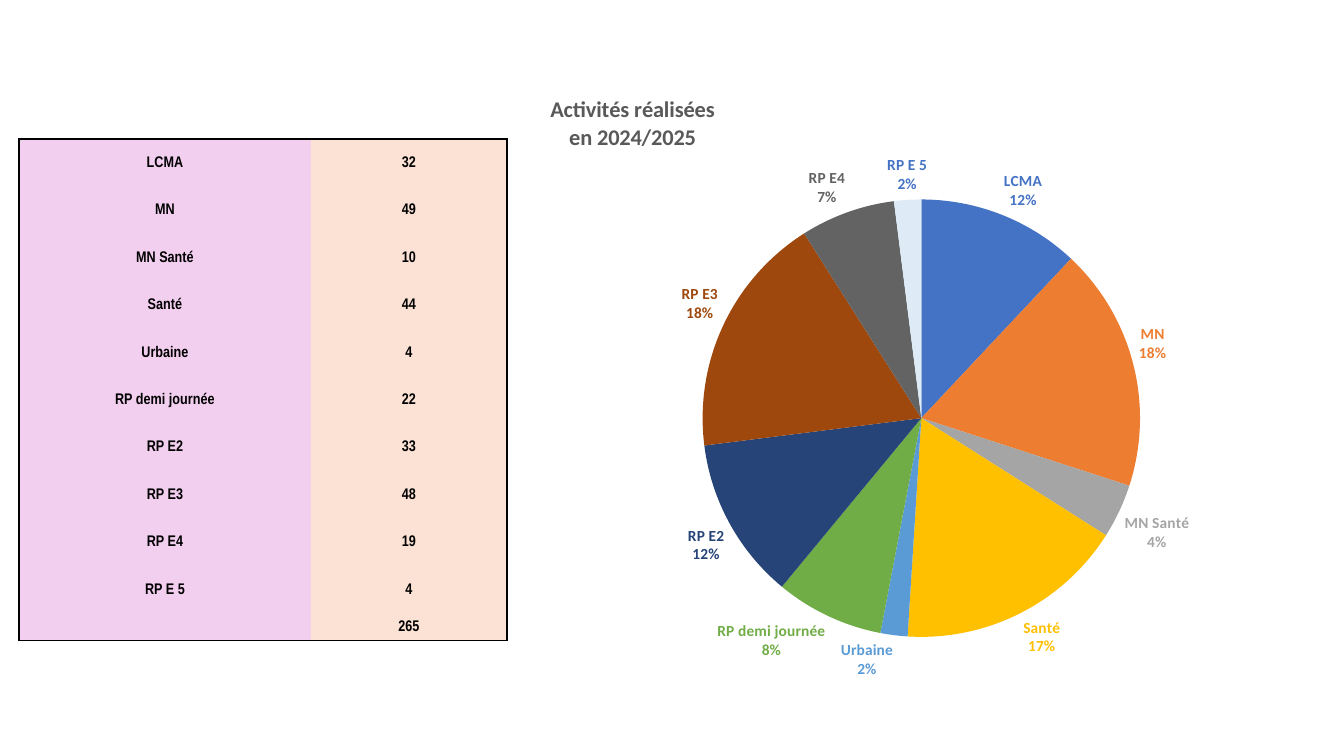
"""Build the slide of activities carried out in 2024/2025."""
from lxml.etree import SubElement as Sub
from pptx import Presentation
from pptx.chart.data import CategoryChartData as Data
from pptx.dml.color import RGBColor as Rgb
from pptx.enum.chart import XL_CHART_TYPE as Kind, XL_LABEL_POSITION as Spot
from pptx.enum.text import MSO_ANCHOR as Anchor, PP_ALIGN as Align
from pptx.oxml import parse_xml
from pptx.oxml.ns import nsdecls, qn
from pptx.util import Pt

SCALE = 12192000 / 1344
INK = {"text": "000000", "title": "595959", "name": "F2CEEF", "count": "FBE2D5"}
NO_STYLE = "{2D5ABB26-0587-4C30-8999-92F81FD0307C}"
ROWS = [
    ("LCMA", 32, 12, "4472C4"),
    ("MN", 49, 18, "ED7D31"),
    ("MN Santé", 10, 4, "A5A5A5"),
    ("Santé", 44, 17, "FFC000"),
    ("Urbaine", 4, 2, "5B9BD5"),
    ("RP demi journée", 22, 8, "70AD47"),
    ("RP E2", 33, 12, "264478"),
    ("RP E3", 48, 18, "9E480E"),
    ("RP E4", 19, 7, "636363"),
    ("RP E 5", 4, 2, "DEEBF7"),
]


def px(num):
    return round(num * SCALE)


class Deck:
    def __init__(self, wide, high):
        self.show = Presentation()
        self.show.slide_width, self.show.slide_height = px(wide), px(high)
        self.slide = self.show.slides.add_slide(self.show.slide_layouts[6])

    def style(self, font, face, size, tint):
        font.name, font.size, font.bold = face, Pt(size), True
        font.color.rgb = Rgb.from_string(tint)

    def edge(self, cell, sides):
        props = cell._tc.get_or_add_tcPr()
        for spot, side in enumerate(sides):
            props.insert(spot, parse_xml(
                f'<a:ln{side} {nsdecls("a")} w="12700"><a:solidFill>'
                f'<a:srgbClr val="{INK["text"]}"/></a:solidFill></a:ln{side}>'))

    def cell(self, cell, text, tint):
        cell.fill.solid()
        cell.fill.fore_color.rgb = Rgb.from_string(tint)
        cell.vertical_anchor = Anchor.MIDDLE
        cell.margin_left = cell.margin_right = cell.margin_top = px(1)
        cell.margin_bottom = 0
        cell.text_frame.text = text
        par = cell.text_frame.paragraphs[0]
        par.alignment = Align.CENTER
        for run in par.runs:
            self.style(run.font, "Arial Narrow", 11, INK["text"])
        if not text:
            Sub(par._p, qn("a:endParaRPr"), sz="1100")

    def table(self, left, top, cols, highs, rows):
        last = len(rows) - 1
        table = self.slide.shapes.add_table(
            len(rows), len(cols), px(left), px(top), px(sum(cols)), px(sum(highs))).table
        table.first_row = table.horz_banding = False
        table._tbl.tblPr.find(qn("a:tableStyleId")).text = NO_STYLE
        for col, wide in zip(table.columns, cols):
            col.width = px(wide)
        for row, high in zip(table.rows, highs):
            row.height = px(high)
        for i, texts in enumerate(rows):
            for j, (text, tint) in enumerate(zip(texts, (INK["name"], INK["count"]))):
                cell = table.cell(i, j)
                self.cell(cell, text, tint)
                self.edge(cell, ["LR"[j]] + ["T"] * (i == 0) + ["B"] * (i == last))

    def place(self, node, spot, **parts):
        for old in node.findall(qn("c:layout")):
            node.remove(old)
        layout = parse_xml(f'<c:layout {nsdecls("c")}><c:manualLayout/></c:layout>')
        for tag, val in parts.items():
            Sub(layout[0], qn(f"c:{tag}"), val=str(val))
        node.insert(spot, layout)

    def title(self, chart, text):
        frame = chart.chart_title.text_frame
        frame.text = text
        for par in frame.paragraphs:
            par.alignment = Align.CENTER
            for run in par.runs:
                self.style(run.font, "Calibri", 16, INK["title"])
        self.place(chart.chart_title.element, 1, xMode="edge", yMode="edge", x=0.03, y=0.05)

    def label(self, point, tint):
        label = point.data_label
        self.style(label.font, "Calibri", 11, tint)
        label.position = Spot.OUTSIDE_END
        node = label._dLbl
        for tag, val in (("showVal", "0"), ("showCatName", "1"), ("showPercent", "1")):
            node.find(qn(f"c:{tag}")).set("val", val)
        Sub(node, qn("c:separator")).text = "\n"

    def pie(self, left, top, wide, high, text, rows):
        data = Data()
        data.categories = [row[0] for row in rows]
        data.add_series("Series 1", [row[2] for row in rows])
        chart = self.slide.shapes.add_chart(
            Kind.PIE, px(left), px(top), px(wide), px(high), data).chart
        chart.has_legend = False
        chart.font.name, chart.font.size = "Calibri", Pt(10)
        chart.font.color.rgb = Rgb.from_string(INK["text"])
        self.title(chart, text)
        self.place(chart.element.find(".//" + qn("c:plotArea")), 0, layoutTarget="inner",
                   xMode="edge", yMode="edge", x=0.22, y=0.22, w=0.54, h=0.69)
        plot = chart.plots[0]
        plot.vary_by_categories = True
        for i, row in enumerate(rows):
            point = plot.series[0].points[i]
            point.format.fill.solid()
            point.format.fill.fore_color.rgb = Rgb.from_string(row[3])
            self.label(point, rows[0][3] if i == len(rows) - 1 else row[3])


def main():
    deck = Deck(1344, 756)
    deck.pie(523, 60, 813, 634, "Activités réalisées\nen 2024/2025", ROWS)
    cells = [(row[0], str(row[1])) for row in ROWS]
    cells.append(("", str(sum(row[1] for row in ROWS))))
    highs = [47 + i % 2 for i in range(len(ROWS))] + [27]
    deck.table(19, 139, (292, 196), highs, cells)
    deck.show.save("out.pptx")


if __name__ == "__main__":
    main()
